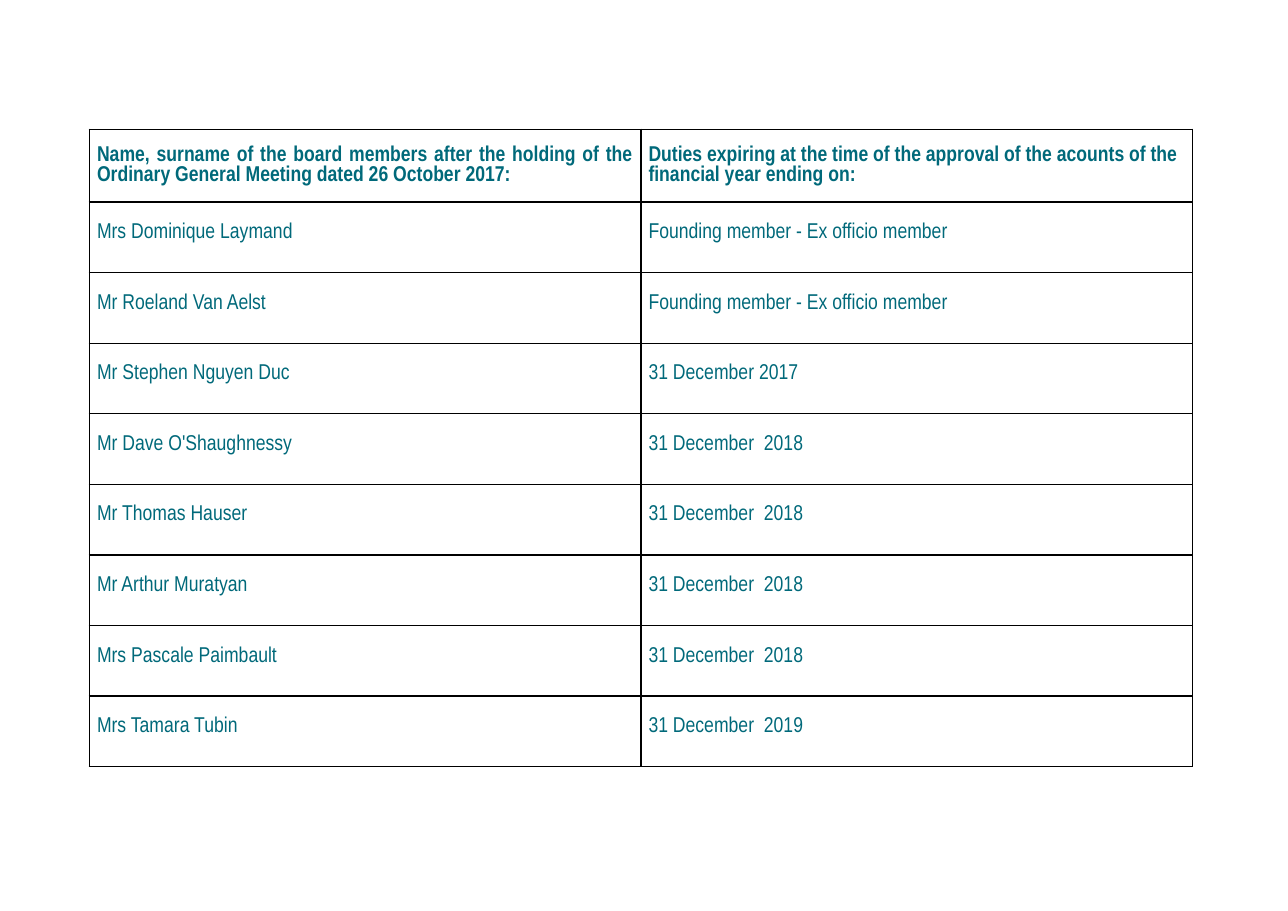
"""Build a slide listing board members and the end of their duties."""
import dataclasses

import lxml.etree
import pptx
import pptx.dml.color
import pptx.enum.text
import pptx.oxml.ns
import pptx.util

Pt = pptx.util.Pt
Align = pptx.enum.text.PP_ALIGN
Anchor = pptx.enum.text.MSO_ANCHOR


@dataclasses.dataclass(frozen=True)
class Theme:
    """Colours, type and spacing of the slide."""
    font: str = "Arial Narrow"
    size: float = 14
    text: str = "00697A"
    border: str = "000000"
    border_width: float = 1
    side_inset: float = 5.04
    member_inset: float = 13.7
    space_after: float = 12


class BoardSlide:
    """Hold the theme and the current slide."""

    def __init__(self, presentation, theme):
        """Add a blank slide."""
        self.theme = theme
        self.slide = presentation.slides.add_slide(presentation.slide_layouts[6])

    def add_table(self, rows, left, top, column_width, header_height, member_height):
        """Add a bordered table whose first row is the header."""
        heights = [header_height] + [member_height] * (len(rows) - 1)
        columns = len(rows[0])
        table = self.slide.shapes.add_table(
            len(rows), columns, Pt(left), Pt(top),
            Pt(column_width * columns), Pt(sum(heights))).table
        table.first_row = False
        table.horz_banding = False
        for column in table.columns:
            column.width = Pt(column_width)
        for row_index, (entries, height) in enumerate(zip(rows, heights)):
            table.rows[row_index].height = Pt(height)
            for column_index, entry in enumerate(entries):
                cell = table.cell(row_index, column_index)
                self.write_cell(cell, entry, row_index == 0)
                self.draw_borders(cell)
                cell.fill.background()
        header_duties = table.cell(0, 1).text_frame.paragraphs[0]
        header_duties.alignment = Align.LEFT

    def write_cell(self, cell, entry, is_header):
        """Fill one cell with formatted text."""
        theme = self.theme
        cell.margin_left = cell.margin_right = Pt(theme.side_inset)
        cell.margin_top = Pt(0 if is_header else theme.member_inset)
        cell.margin_bottom = Pt(0)
        cell.vertical_anchor = Anchor.MIDDLE if is_header else Anchor.TOP
        cell.text_frame.text = entry
        paragraph = cell.text_frame.paragraphs[0]
        paragraph.alignment = Align.JUSTIFY
        paragraph.space_after = Pt(theme.space_after)
        font = paragraph.runs[0].font
        font.name = theme.font
        font.size = Pt(theme.size)
        font.bold = is_header
        font.color.rgb = pptx.dml.color.RGBColor.from_string(theme.text)

    def draw_borders(self, cell):
        """Draw a solid line on the four sides of a cell."""
        qn = pptx.oxml.ns.qn
        properties = cell._tc.get_or_add_tcPr()
        for side in ("a:lnL", "a:lnR", "a:lnT", "a:lnB"):
            line = lxml.etree.SubElement(
                properties, qn(side), w=str(Pt(self.theme.border_width)))
            fill = lxml.etree.SubElement(line, qn("a:solidFill"))
            lxml.etree.SubElement(fill, qn("a:srgbClr"), val=self.theme.border)


def main():
    """Create and save the presentation."""
    presentation = pptx.Presentation()
    presentation.slide_width = Pt(841.68)
    presentation.slide_height = Pt(595.44)
    board_terms = [
        ("Name, surname of the board members after the holding of the "
         "Ordinary General Meeting dated 26 October 2017:",
         "Duties expiring at the time of the approval of the acounts of the "
         "financial year ending on:"),
        ("Mrs Dominique Laymand", "Founding member - Ex officio member"),
        ("Mr Roeland Van Aelst", "Founding member - Ex officio member"),
        ("Mr Stephen Nguyen Duc", "31 December 2017"),
        ("Mr Dave O'Shaughnessy", "31 December  2018"),
        ("Mr Thomas Hauser", "31 December  2018"),
        ("Mr Arthur Muratyan", "31 December  2018"),
        ("Mrs Pascale Paimbault", "31 December  2018"),
        ("Mrs Tamara Tubin", "31 December  2019"),
    ]
    board = BoardSlide(presentation, Theme())
    board.add_table(board_terms, left=58.4, top=84.5, column_width=360.4,
                    header_height=47.6, member_height=46.13)
    presentation.save("out.pptx")


if __name__ == "__main__":
    main()
